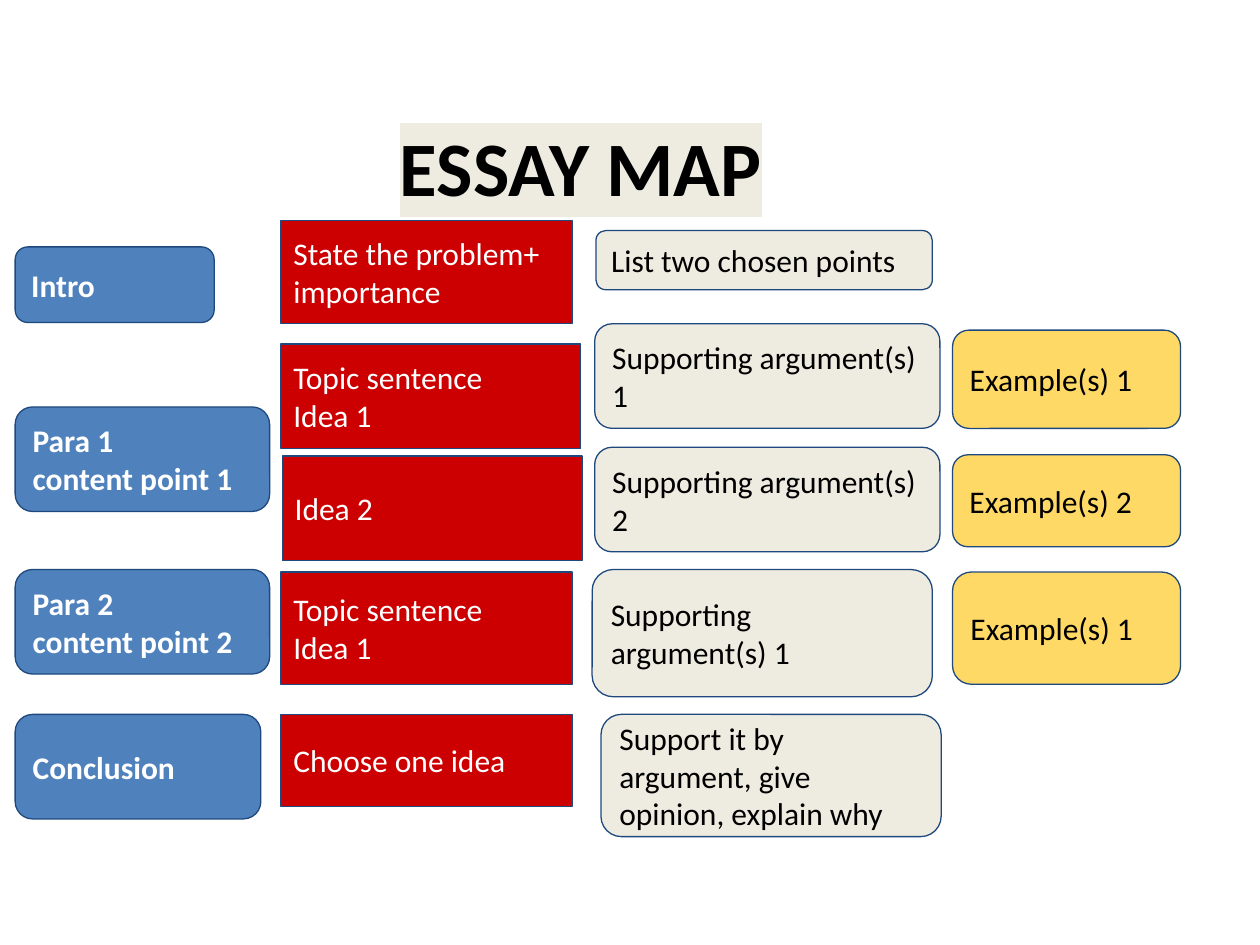
from dataclasses import dataclass

from lxml import etree
from pptx import Presentation, util as u
from pptx.dml.color import RGBColor
from pptx.enum import shapes, text
from pptx.oxml import ns

FONT = "Calibri"
EDGE = "1F497D"
CREAM = "EEECE1"
BLACK = "000000"
WHITE = "FFFFFF"
ROUND = shapes.MSO_SHAPE.ROUNDED_RECTANGLE
RECT = shapes.MSO_SHAPE.RECTANGLE


@dataclass(frozen=True)
class Style:
    form: shapes.MSO_SHAPE
    fill: str
    ink: str
    bold: bool = False


@dataclass(frozen=True)
class Box:
    style: Style
    left: float
    top: float
    width: float
    height: float
    words: str


PART = Style(ROUND, "4F81BD", WHITE, True)
IDEA = Style(RECT, "CC0000", WHITE)
POINT = Style(ROUND, CREAM, BLACK)
CASE = Style(ROUND, "FFD966", BLACK)

BOXES = [
    Box(PART, 0.12, 1.96, 1.58, 0.6, "Intro"),
    Box(PART, 0.12, 3.23, 2.02, 0.83, "Para 1\ncontent point 1"),
    Box(PART, 0.12, 4.52, 2.02, 0.83, "Para 2\ncontent point 2"),
    Box(PART, 0.12, 5.67, 1.95, 0.83, "Conclusion"),
    Box(IDEA, 2.23, 1.75, 2.31, 0.82, "State the problem+ importance"),
    Box(IDEA, 2.23, 2.73, 2.38, 0.83, "Topic sentence\nIdea 1"),
    Box(IDEA, 2.24, 3.62, 2.38, 0.83, "Idea 2"),
    Box(IDEA, 2.23, 4.54, 2.31, 0.89, "Topic sentence\nIdea 1"),
    Box(IDEA, 2.23, 5.67, 2.31, 0.73, "Choose one idea"),
    Box(POINT, 4.73, 1.83, 2.67, 0.47, "List two chosen points"),
    Box(POINT, 4.72, 2.57, 2.74, 0.83, "Supporting argument(s) 1"),
    Box(POINT, 4.72, 3.55, 2.74, 0.83, "Supporting argument(s) 2"),
    Box(POINT, 4.7, 4.52, 2.7, 1.01, "Supporting argument(s) 1"),
    Box(POINT, 4.77, 5.67, 2.7, 0.97,
        "Support it by argument, give opinion, explain why"),
    Box(CASE, 7.56, 2.62, 1.81, 0.78, "Example(s) 1"),
    Box(CASE, 7.56, 3.61, 1.81, 0.73, "Example(s) 2"),
    Box(CASE, 7.56, 4.54, 1.81, 0.89, "Example(s) 1"),
]


def paint(target, tone: str) -> None:
    target.rgb = RGBColor.from_string(tone)


def write(frame, words: str, size: int, ink: str, bold: bool,
          align: text.PP_ALIGN, anchor: text.MSO_ANCHOR) -> None:
    frame.text = words
    frame.word_wrap = True
    frame.auto_size = text.MSO_AUTO_SIZE.NONE
    frame.vertical_anchor = anchor
    frame.margin_left = frame.margin_right = u.Inches(0.1)
    frame.margin_top = frame.margin_bottom = u.Inches(0.1)
    for line in frame.paragraphs:
        line.alignment = align
        line.font.name = FONT
        line.font.size = u.Pt(size)
        line.font.bold = bold
        paint(line.font.color, ink)


def mark(run, tone: str) -> None:
    light = etree.SubElement(run.font._element, ns.qn("a:highlight"))
    etree.SubElement(light, ns.qn("a:srgbClr"), val=tone)


def head(slide) -> None:
    title = slide.shapes.title
    title.left, title.top = u.Inches(0.76), u.Inches(0.85)
    title.width, title.height = u.Inches(7.7), u.Inches(0.9)
    write(title.text_frame, "ESSAY MAP", 44, BLACK, True,
          text.PP_ALIGN.CENTER, text.MSO_ANCHOR.TOP)
    mark(title.text_frame.paragraphs[0].runs[0], CREAM)


def draw(slide, box: Box) -> None:
    place = map(u.Inches, (box.left, box.top, box.width, box.height))
    shape = slide.shapes.add_shape(box.style.form, *place)
    shape.shadow.inherit = False
    shape.fill.solid()
    paint(shape.fill.fore_color, box.style.fill)
    paint(shape.line.color, EDGE)
    shape.line.width = u.Pt(0.75)
    write(shape.text_frame, box.words, 18, box.style.ink, box.style.bold,
          text.PP_ALIGN.LEFT, text.MSO_ANCHOR.MIDDLE)


def main() -> None:
    deck = Presentation()
    deck.slide_width, deck.slide_height = u.Inches(10), u.Inches(7.5)
    slide = deck.slides.add_slide(deck.slide_layouts[5])
    head(slide)
    for box in BOXES:
        draw(slide, box)
    deck.save("out.pptx")


if __name__ == "__main__":
    main()
